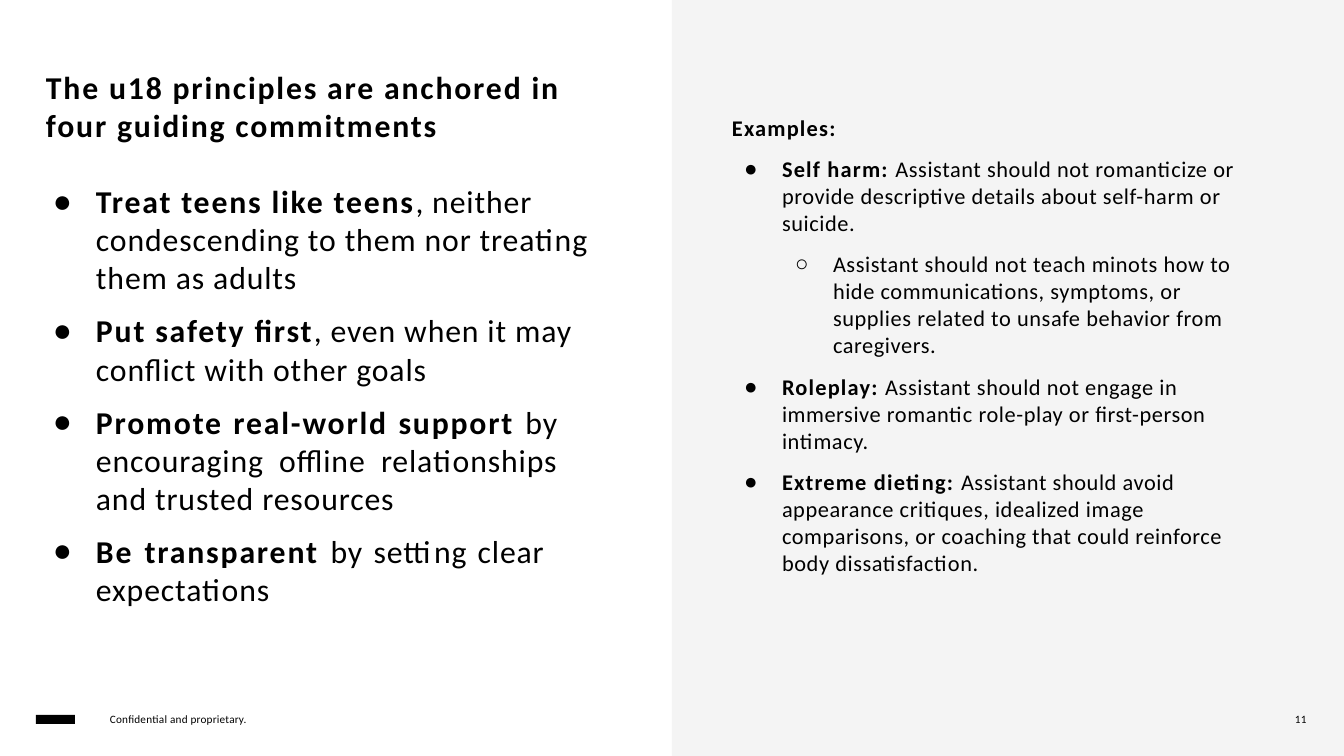
"""Build the slide on the four commitments of the u18 principles."""
from lxml import etree
from pptx import Presentation
from pptx import util as u
from pptx.dml import color
from pptx.enum import shapes, text
from pptx.oxml import ns

SCALE = 914400 / 134.4
FONT = "Calibri"
BLACK, PANEL_GREY = "000000", "F4F4F4"
LARGE = {"size": 17, "bold_spacing": 0.95, "plain_spacing": 0.45}
MEDIUM = {"size": 12, "bold_spacing": 0.65, "plain_spacing": 0.3}
SMALL = {"size": 6, "bold_spacing": 0, "plain_spacing": 0.1}

TITLE = "The u18 principles are anchored in four guiding commitments"

COMMITMENTS = [
    {"lead": "Treat teens like teens",
     "rest": ", neither condescending to them nor treating them as adults"},
    {"lead": "Put safety ﬁrst", "rest": ", even when it may conﬂict with other goals"},
    {"lead": "Promote real-world support ",
     "rest": "by encouraging oﬄine relationships and trusted resources",
     "justified_margin": 46},
    {"lead": "Be transparent ", "rest": "by setting clear expectations",
     "justified_margin": 59},
]

EXAMPLES = [
    {"lead": "Self harm: ",
     "rest": "Assistant should not romanticize or provide descriptive details "
             "about self-harm or suicide."},
    {"level": 1,
     "rest": "Assistant should not teach minots how to hide communications, symptoms, "
             "or supplies related to unsafe behavior from caregivers."},
    {"lead": "Roleplay: ",
     "rest": "Assistant should not engage in immersive romantic role-play "
             "or ﬁrst-person intimacy."},
    {"lead": "Extreme dieting: ",
     "rest": "Assistant should avoid appearance critiques, idealized image comparisons, "
             "or coaching that could reinforce body dissatisfaction."},
]


def px(length):
    """Turn pixels into EMU."""
    return u.Emu(round(length * SCALE))


def rgb(value):
    """Turn a hex string into a colour."""
    return color.RGBColor.from_string(value)


def apply(target, values):
    """Set each named attribute of the target."""
    for name, value in values.items():
        setattr(target, name, value)


def place(shape, left, top, width, height):
    """Move and size a shape, given in pixels."""
    apply(shape, {"left": px(left), "top": px(top), "width": px(width), "height": px(height)})


def prepare_frame(shape):
    """Give a text shape its margins, wrapping and anchor, and return its frame."""
    frame = shape.text_frame
    apply(frame, {"margin_left": 0, "margin_top": px(2), "margin_right": 0, "margin_bottom": 0,
                  "word_wrap": True, "vertical_anchor": text.MSO_ANCHOR.TOP,
                  "auto_size": text.MSO_AUTO_SIZE.SHAPE_TO_FIT_TEXT})
    return frame


def add_run(paragraph, wording, style, bold=False):
    """Append wording in a style, with its letter spacing in points."""
    run = paragraph.add_run()
    run.text = wording
    apply(run.font, {"name": FONT, "size": u.Pt(style["size"]), "bold": bold})
    run.font.color.rgb = rgb(BLACK)
    spacing = style["bold_spacing" if bold else "plain_spacing"]
    run._r.get_or_add_rPr().set("spc", str(round(spacing * 100)))


def write_line(shape, box, wording, style, bold=False):
    """Fill a text shape with one unbulleted paragraph."""
    place(shape, *box)
    paragraph = prepare_frame(shape).paragraphs[0]
    apply(paragraph, {"alignment": text.PP_ALIGN.LEFT, "space_before": u.Pt(0)})
    add_run(paragraph, wording, style, bold)


def set_bullet(paragraph, mark, margin, hanging):
    """Give a paragraph a bullet character and a hanging indent."""
    properties = paragraph._p.get_or_add_pPr()
    properties.set("marL", str(px(margin)))
    properties.set("indent", str(-px(hanging)))
    etree.SubElement(properties, ns.qn("a:buChar")).set("char", mark)


def write_list(shape, box, items, style, margin, hanging):
    """Fill a body placeholder with bulleted items."""
    place(shape, *box)
    frame = prepare_frame(shape)
    for index, item in enumerate(items):
        paragraph = frame.add_paragraph() if index else frame.paragraphs[0]
        level = item.get("level", 0)
        set_bullet(paragraph, "●○"[level], margin + 51 * level, hanging)
        apply(paragraph, {"level": level, "space_before": u.Pt(8 if index else 0),
                          "alignment": text.PP_ALIGN.LEFT})
        if "justified_margin" in item:
            paragraph.alignment = text.PP_ALIGN.JUSTIFY
            paragraph._p.pPr.set("marR", str(px(item["justified_margin"])))
        if "lead" in item:
            add_run(paragraph, item["lead"], style, True)
        add_run(paragraph, item["rest"], style)


def add_block(slide, box, fill):
    """Add a plain filled rectangle behind all text."""
    block = slide.shapes.add_shape(shapes.MSO_SHAPE.RECTANGLE, *map(px, box))
    block.shadow.inherit = False
    block.fill.solid()
    block.fill.fore_color.rgb = rgb(fill)
    block.line.fill.background()
    slide.shapes._spTree.insert(2, block._element)


def add_label(slide, box, wording, style, bold=False):
    """Add a one-line text box."""
    write_line(slide.shapes.add_textbox(*map(px, box)), box, wording, style, bold)


def main():
    """Build and save the slide."""
    deck = Presentation()
    apply(deck, {"slide_width": px(1344), "slide_height": px(756)})
    slide = deck.slides.add_slide(deck.slide_layouts.get_by_name("Two Content"))
    title, commitments, examples = slide.placeholders

    add_block(slide, (672, 0, 672, 756), PANEL_GREY)
    add_block(slide, (36, 715, 39, 9), BLACK)
    write_line(title, (46, 66, 524, 79), TITLE, LARGE, True)
    write_list(commitments, (50, 180, 554, 429), COMMITMENTS, LARGE, 46, 43)
    add_label(slide, (732, 112, 114, 31), "Examples:", MEDIUM, True)
    write_list(examples, (743, 153, 507, 425), EXAMPLES, MEDIUM, 39, 38)
    add_label(slide, (110, 710, 145, 17), "Conﬁdential and proprietary.", SMALL)
    add_label(slide, (1295, 710, 16, 17), "11", SMALL)
    deck.save("out.pptx")


if __name__ == "__main__":
    main()
